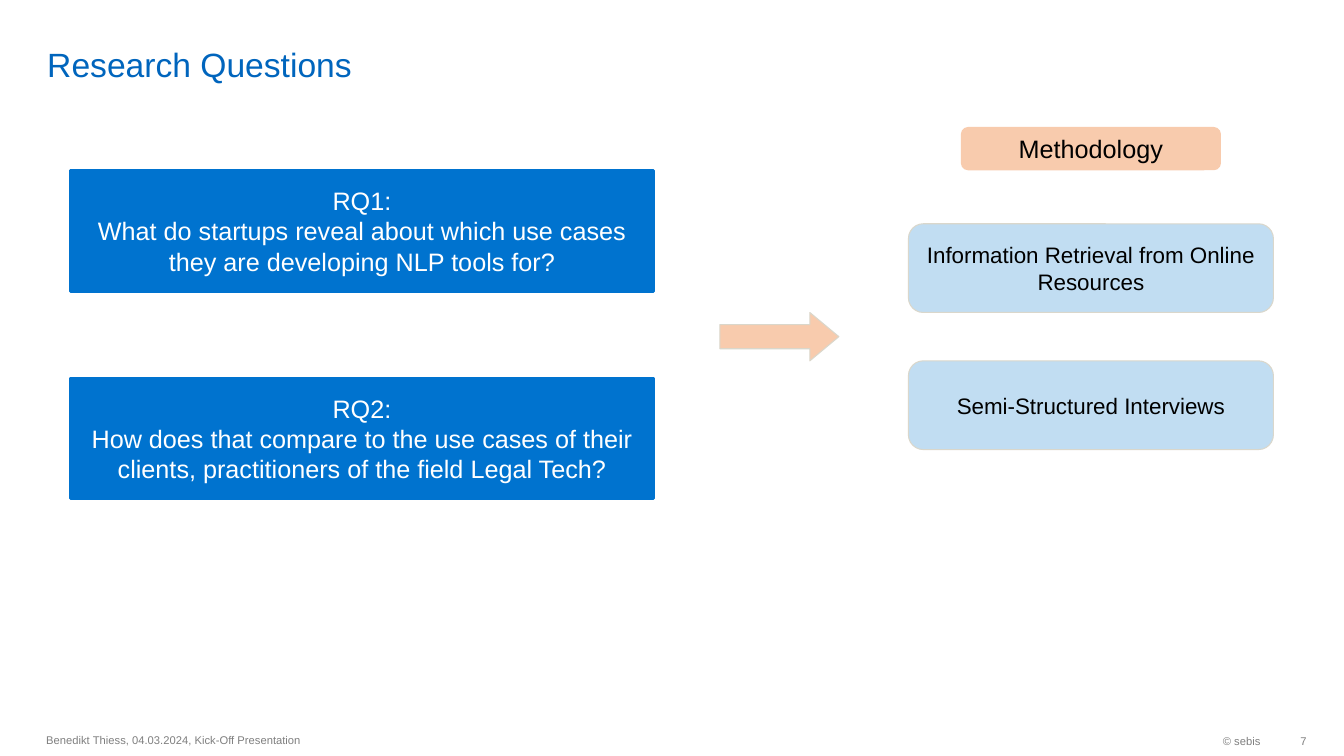
from pptx import Presentation
from pptx.dml.color import RGBColor
from pptx.enum.shapes import MSO_SHAPE
from pptx.enum.text import MSO_ANCHOR, PP_ALIGN
from pptx.util import Inches, Pt

RECTANGLE = MSO_SHAPE.RECTANGLE
ROUNDED = MSO_SHAPE.ROUNDED_RECTANGLE
RIGHT_ARROW = MSO_SHAPE.RIGHT_ARROW
MIDDLE, BOTTOM = MSO_ANCHOR.MIDDLE, MSO_ANCHOR.BOTTOM
LEFT, CENTER, RIGHT = PP_ALIGN.LEFT, PP_ALIGN.CENTER, PP_ALIGN.RIGHT

TITLE_BLUE = RGBColor(0x00, 0x65, 0xBD)
QUESTION_BLUE = RGBColor(0x00, 0x73, 0xCF)
METHOD_BLUE = RGBColor(0xC1, 0xDD, 0xF2)
PEACH = RGBColor(0xF8, 0xCB, 0xAD)
OUTLINE = RGBColor(0xDA, 0xD7, 0xCB)
GRAY = RGBColor(0x7F, 0x7F, 0x7F)
WHITE = RGBColor(0xFF, 0xFF, 0xFF)
BLACK = RGBColor(0x00, 0x00, 0x00)

QUESTIONS = [
    "RQ1:\nWhat do startups reveal about which use cases they are developing NLP tools for?",
    "RQ2:\nHow does that compare to the use cases of their clients, "
    "practitioners of the field Legal Tech?",
]
METHODS = ["Information Retrieval from Online Resources", "Semi-Structured Interviews"]


class SlideBuilder:
    font = "Arial"

    def __init__(self, slide):
        self.slide = slide

    def set_text(self, frame, text, size, color, align, anchor=MIDDLE):
        frame.word_wrap = True
        frame.vertical_anchor = anchor
        frame.text = text
        for paragraph in frame.paragraphs:
            paragraph.alignment = align
            for run in paragraph.runs:
                run.font.name = self.font
                run.font.size = Pt(size)
                run.font.color.rgb = color

    def label(self, box, text, size, color, align=LEFT, anchor=MIDDLE,
              right=0.1, vertical=0.05):
        frame = self.slide.shapes.add_textbox(*map(Inches, box)).text_frame
        frame.margin_right = Inches(right)
        frame.margin_top = frame.margin_bottom = Inches(vertical)
        self.set_text(frame, text, size, color, align, anchor)

    def shape(self, kind, box, fill, line=None, width=0.75):
        shape = self.slide.shapes.add_shape(kind, *map(Inches, box))
        shape.shadow.inherit = False
        shape.fill.solid()
        shape.fill.fore_color.rgb = fill
        if line is None:
            shape.line.fill.background()
        else:
            shape.line.color.rgb = line
            shape.line.width = Pt(width)
        return shape

    def block(self, kind, box, text, size, color, fill, line=None, width=0.75):
        shape = self.shape(kind, box, fill, line, width)
        self.set_text(shape.text_frame, text, size, color, CENTER)

    def arrow(self, box, fill, line):
        arrow = self.shape(RIGHT_ARROW, box, fill, line)
        arrow.adjustments[0] = 0.5
        arrow.adjustments[1] = 0.6


def main():
    deck = Presentation()
    deck.slide_width, deck.slide_height = Inches(13.33), Inches(7.5)
    builder = SlideBuilder(deck.slides.add_slide(deck.slide_layouts[6]))

    builder.label((0.37, 0.05, 11.58, 0.79), "Research Questions", 24, TITLE_BLUE,
                  anchor=BOTTOM, vertical=0)
    builder.label((0.36, 7.18, 6.3, 0.32),
                  "Benedikt Thiess, 04.03.2024, Kick-Off Presentation", 8, GRAY)
    builder.label((10.26, 7.19, 2.34, 0.32), "© sebis", 8, GRAY, RIGHT)
    builder.label((12.6, 7.19, 0.36, 0.32), "7", 8, GRAY, RIGHT, right=0)

    for row, question in enumerate(QUESTIONS):
        builder.block(RECTANGLE, (0.7, 1.69 + 2.06 * row, 5.78, 1.2), question,
                      18, WHITE, QUESTION_BLUE, QUESTION_BLUE, 2)

    builder.arrow((7.14, 3.1, 1.18, 0.48), PEACH, OUTLINE)

    builder.block(ROUNDED, (9.53, 1.26, 2.58, 0.43), "Methodology", 18, BLACK, PEACH)
    for row, method in enumerate(METHODS):
        builder.block(ROUNDED, (9.01, 2.22 + 1.36 * row, 3.62, 0.88), method,
                      16, BLACK, METHOD_BLUE, OUTLINE)

    deck.save("out.pptx")


if __name__ == "__main__":
    main()
